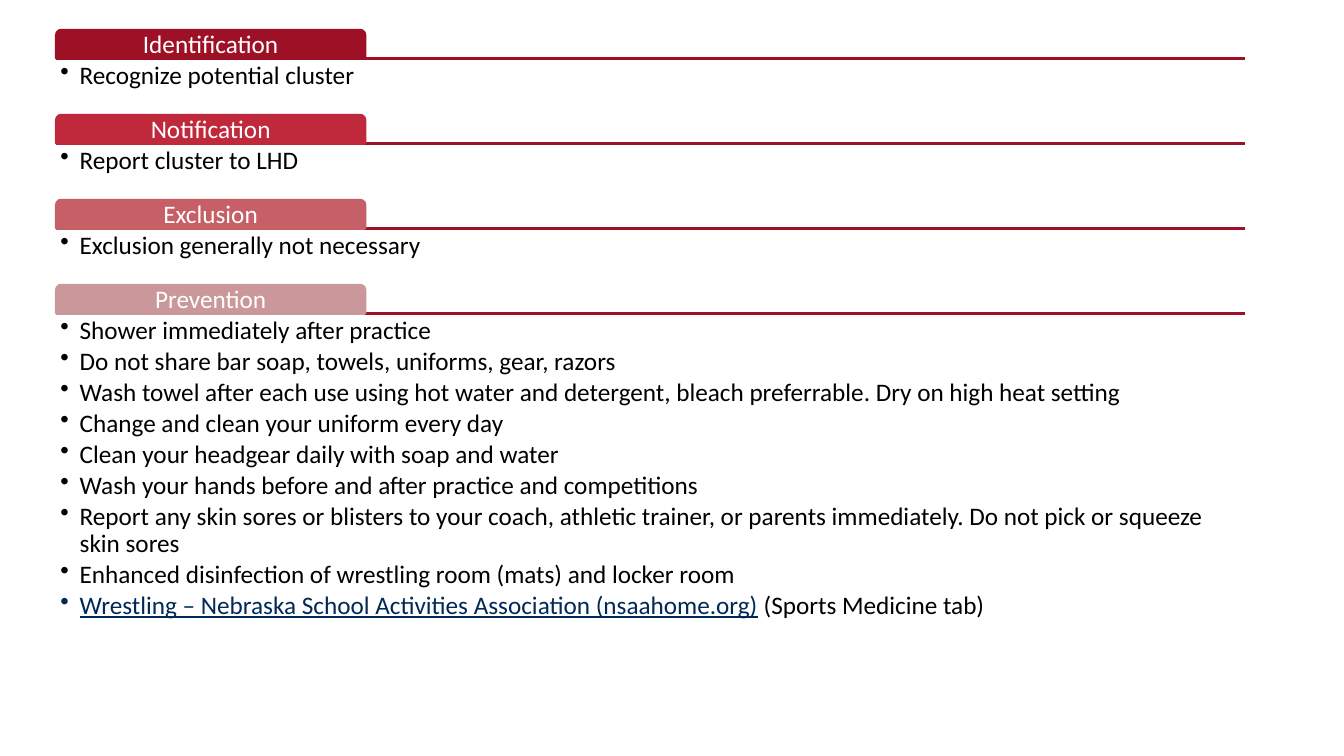
from dataclasses import dataclass

import pptx
import pptx.dml.color
import pptx.enum.shapes
import pptx.enum.text
import pptx.oxml
import pptx.oxml.ns
import pptx.util

Inches = pptx.util.Inches
Pt = pptx.util.Pt

LEFT = 0.56
WIDTH = 11.79
FIRST_TAB_TOP = 0.3
SECTION_PITCH = 0.843
TAB_WIDTH = 3.06
TAB_HEIGHT = 0.28
INDENT = 0.19
RULE_COLOR = "9D1026"
TEXT_COLOR = "000000"
LINK_COLOR = "002957"


@dataclass(frozen=True)
class Span:
    text: str
    color: str = TEXT_COLOR
    underline: bool = False


@dataclass(frozen=True)
class Section:
    label: str
    color: str
    bullets: list[list[Span]]
    body_height: float = 0.55


SECTIONS = [
    Section("Identification", "9D1026", [[Span("Recognize potential cluster")]]),
    Section("Notification", "C0293B", [[Span("Report cluster to LHD")]]),
    Section("Exclusion", "C75F67", [[Span("Exclusion generally not necessary")]]),
    Section(
        "Prevention",
        "CA989A",
        [
            [Span("Shower immediately after practice")],
            [Span("Do not share bar soap, towels, uniforms, gear, razors")],
            [Span("Wash towel after each use using hot water and detergent, "
                  "bleach preferrable. Dry on high heat setting")],
            [Span("Change and clean your uniform every day")],
            [Span("Clean your headgear daily with soap and water")],
            [Span("Wash your hands before and after practice and competitions")],
            [Span("Report any skin sores or blisters to your coach, athletic trainer, "
                  "or parents immediately. Do not pick or squeeze skin sores")],
            [Span("Enhanced disinfection of wrestling room (mats) and locker room")],
            [Span("Wrestling – Nebraska School Activities Association (nsaahome.org)",
                  LINK_COLOR, True),
             Span(" (Sports Medicine tab)")],
        ],
        body_height=3.1,
    ),
]


def rgb(color: str) -> pptx.dml.color.RGBColor:
    return pptx.dml.color.RGBColor.from_string(color)


def add_text(paragraph, text: str, *, color: str, underline: bool = False,
             size: float = 18, font: str = "Calibri") -> None:
    run = paragraph.add_run()
    run.text = text
    run.font.name = font
    run.font.size = Pt(size)
    run.font.color.rgb = rgb(color)
    if underline:
        run.font.underline = True


def prepare_frame(text_frame, anchor) -> None:
    text_frame.word_wrap = True
    text_frame.vertical_anchor = anchor
    text_frame.margin_left = text_frame.margin_right = Inches(0.04)
    text_frame.margin_top = text_frame.margin_bottom = Inches(0.04)


def add_bullet(paragraph) -> None:
    properties = paragraph._p.get_or_add_pPr()
    properties.set("marL", str(Inches(INDENT)))
    properties.set("indent", str(-Inches(INDENT)))
    bullet = pptx.oxml.parse_xml(
        f'<a:buChar {pptx.oxml.ns.nsdecls("a")} char="•"/>')
    properties.append(bullet)


def add_rule(slide, top: float) -> None:
    rule = slide.shapes.add_connector(
        pptx.enum.shapes.MSO_CONNECTOR.STRAIGHT,
        Inches(LEFT), Inches(top), Inches(LEFT + WIDTH), Inches(top))
    rule.line.color.rgb = rgb(RULE_COLOR)
    rule.line.width = Pt(2)
    rule._element.spPr.append(
        pptx.oxml.parse_xml(f'<a:effectLst {pptx.oxml.ns.nsdecls("a")}/>'))


def add_tab(slide, section: Section, top: float) -> None:
    tab = slide.shapes.add_shape(
        pptx.enum.shapes.MSO_SHAPE.ROUND_2_SAME_RECTANGLE,
        Inches(LEFT), Inches(top), Inches(TAB_WIDTH), Inches(TAB_HEIGHT))
    tab.shadow.inherit = False
    tab.fill.solid()
    tab.fill.fore_color.rgb = rgb(section.color)
    tab.line.color.rgb = rgb(section.color)
    tab.line.width = Pt(2)
    prepare_frame(tab.text_frame, pptx.enum.text.MSO_ANCHOR.MIDDLE)
    paragraph = tab.text_frame.paragraphs[0]
    paragraph.alignment = pptx.enum.text.PP_ALIGN.CENTER
    paragraph.line_spacing = 0.9
    add_text(paragraph, section.label, color="FFFFFF")


def add_body(slide, section: Section, top: float) -> None:
    body = slide.shapes.add_textbox(
        Inches(LEFT), Inches(top), Inches(WIDTH), Inches(section.body_height))
    text_frame = body.text_frame
    prepare_frame(text_frame, pptx.enum.text.MSO_ANCHOR.TOP)
    for index, spans in enumerate(section.bullets):
        paragraph = text_frame.add_paragraph() if index else text_frame.paragraphs[0]
        add_bullet(paragraph)
        paragraph.line_spacing = 0.9
        paragraph.space_after = Pt(2.7)
        for span in spans:
            add_text(paragraph, span.text, color=span.color, underline=span.underline)


def main() -> None:
    presentation = pptx.Presentation()
    presentation.slide_width = Inches(13.33)
    presentation.slide_height = Inches(7.5)
    slide = presentation.slides.add_slide(presentation.slide_layouts[6])
    for index, section in enumerate(SECTIONS):
        tab_top = FIRST_TAB_TOP + index * SECTION_PITCH
        rule_top = tab_top + TAB_HEIGHT
        add_rule(slide, rule_top)
        add_tab(slide, section, tab_top)
        add_body(slide, section, rule_top)
    presentation.save("out.pptx")


if __name__ == "__main__":
    main()
